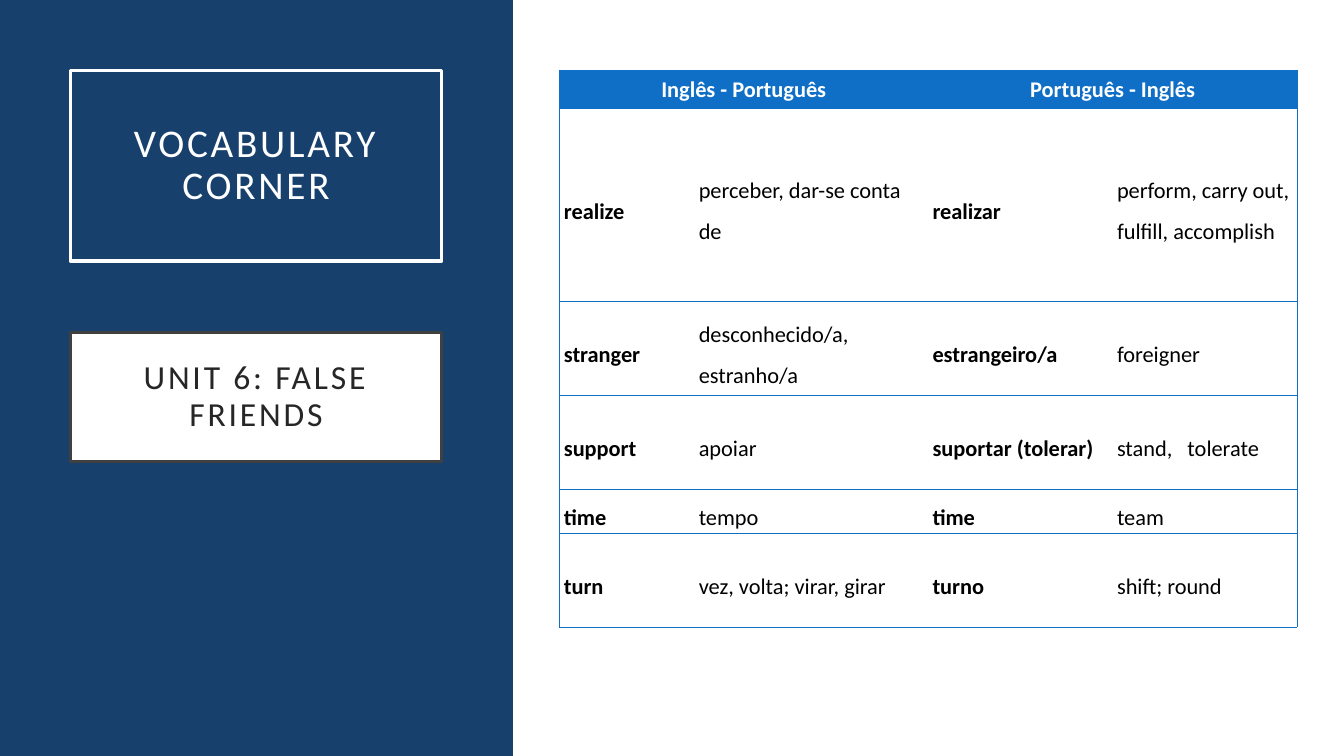
from dataclasses import dataclass

from lxml import etree
from pptx import Presentation
from pptx import util as u
from pptx.dml.color import RGBColor
from pptx.enum import shapes, text
from pptx.oxml.ns import qn
from pptx.slide import Slide

COLORS = {
    "navy": "17406D",
    "blue": "0F6FC6",
    "white": "FFFFFF",
    "frame": "404040",
    "ink": "262626",
    "black": "000000",
}
FONT = "Calibri"
BOX_LEFT, BOX_WIDTH = 1.78, 9.35
TOP = 1.78
COLUMN_WIDTHS = [3.4, 5.89, 4.65, 4.65]
HEADER_HEIGHT = 0.94
HEADERS = ["Inglês - Português", "Português - Inglês"]


@dataclass
class Box:
    wording: str
    top: float
    height: float
    size: int
    color: str
    line: str
    fill: str | None = None


@dataclass
class Entry:
    height: float
    words: list[str]


TITLE = Box("VOCABULARY CORNER", TOP, 4.8, 28, "white", "white")
UNIT = Box("UNIT 6: FALSE FRIENDS", 8.38, 3.25, 24, "ink", "frame", "white")
ENTRIES = [
    Entry(4.88, ["realize", "perceber, dar-se conta de", "realizar",
                 "perform, carry out, fulfill, accomplish"]),
    Entry(2.36, ["stranger", "desconhecido/a, estranho/a", "estrangeiro/a", "foreigner"]),
    Entry(2.36, ["support", "apoiar", "suportar (tolerar)", "stand,   tolerate"]),
    Entry(1.12, ["time", "tempo", "time", "team"]),
    Entry(2.36, ["turn", "vez, volta; virar, girar", "turno", "shift; round"]),
]


def rgb(name: str) -> RGBColor:
    return RGBColor.from_string(COLORS[name])


def format_text(paragraph, size: int, color: str, bold: bool, spacing: float) -> None:
    paragraph.line_spacing = spacing
    for run in paragraph.runs:
        run.font.name = FONT
        run.font.size = u.Pt(size)
        run.font.bold = bold
        run.font.color.rgb = rgb(color)


def draw_panel(slide: Slide, height: int) -> None:
    panel = slide.shapes.add_shape(shapes.MSO_SHAPE.RECTANGLE, 0, 0, u.Cm(12.93), height)
    panel.shadow.inherit = False
    panel.fill.solid()
    panel.fill.fore_color.rgb = rgb("navy")
    panel.line.fill.background()
    slide.shapes._spTree.insert(2, panel._element)


def format_box(shape, box: Box) -> None:
    shape.left, shape.top = u.Cm(BOX_LEFT), u.Cm(box.top)
    shape.width, shape.height = u.Cm(BOX_WIDTH), u.Cm(box.height)
    if box.fill:
        shape.fill.solid()
        shape.fill.fore_color.rgb = rgb(box.fill)
    else:
        shape.fill.background()
    shape.line.color.rgb = rgb(box.line)
    shape.line.width = u.Pt(2.5)
    frame = shape.text_frame
    frame.text = box.wording
    frame.word_wrap = True
    frame.auto_size = text.MSO_AUTO_SIZE.NONE
    frame.vertical_anchor = text.MSO_ANCHOR.MIDDLE
    frame.margin_left = frame.margin_right = u.Cm(0.51)
    frame.margin_top = frame.margin_bottom = u.Cm(0.51)
    paragraph = frame.paragraphs[0]
    paragraph.alignment = text.PP_ALIGN.CENTER
    format_text(paragraph, box.size, box.color, False, 0.9)
    for run in paragraph.runs:
        run._r.get_or_add_rPr().set("spc", "200")


def set_borders(cell, visible: str) -> None:
    properties = cell._tc.get_or_add_tcPr()
    for side in "LRTB":
        line = etree.SubElement(properties, qn(f"a:ln{side}"), w=str(u.Pt(0.5)))
        if side in visible:
            fill = etree.SubElement(line, qn("a:solidFill"))
            etree.SubElement(fill, qn("a:srgbClr"), val=COLORS["blue"])
        else:
            etree.SubElement(line, qn("a:noFill"))


def format_cell(cell, header: bool, bold: bool, borders: str) -> None:
    set_borders(cell, borders)
    cell.margin_left = cell.margin_right = u.Cm(0.11)
    cell.margin_top = cell.margin_bottom = 0
    cell.vertical_anchor = text.MSO_ANCHOR.TOP if header else text.MSO_ANCHOR.MIDDLE
    paragraph = cell.text_frame.paragraphs[0]
    if header:
        cell.fill.solid()
        cell.fill.fore_color.rgb = rgb("blue")
        paragraph.alignment = text.PP_ALIGN.CENTER
        format_text(paragraph, 16, "white", bold, 1.2)
    else:
        cell.fill.background()
        format_text(paragraph, 16, "black", bold, 1.5)


def draw_vocabulary(slide: Slide) -> None:
    heights = [HEADER_HEIGHT] + [entry.height for entry in ENTRIES]
    table = slide.shapes.add_table(
        len(heights), len(COLUMN_WIDTHS), u.Cm(14.1), u.Cm(TOP),
        u.Cm(sum(COLUMN_WIDTHS)), u.Cm(sum(heights)),
    ).table
    table.first_row = table.horz_banding = False
    for column, width in zip(table.columns, COLUMN_WIDTHS):
        column.width = u.Cm(width)
    for row, height in zip(table.rows, heights):
        row.height = u.Cm(height)
    for index, heading in enumerate(HEADERS):
        first = table.cell(0, 2 * index)
        first.merge(table.cell(0, 2 * index + 1))
        first.text_frame.text = heading
    for row_index, entry in enumerate(ENTRIES, start=1):
        for column_index, word in enumerate(entry.words):
            table.cell(row_index, column_index).text_frame.text = word
    for row_index in range(len(heights)):
        header = row_index == 0
        for column_index in range(len(COLUMN_WIDTHS)):
            borders = "TB"
            if column_index == 0:
                borders += "L"
            if column_index == 3 or (header and column_index == 2):
                borders += "R"
            bold = header or column_index % 2 == 0
            format_cell(table.cell(row_index, column_index), header, bold, borders)


def main() -> None:
    presentation = Presentation()
    presentation.slide_width, presentation.slide_height = u.Cm(33.87), u.Cm(19.05)
    slide = presentation.slides.add_slide(presentation.slide_layouts[5])
    draw_panel(slide, presentation.slide_height)
    format_box(slide.shapes.title, TITLE)
    unit = slide.shapes.add_shape(shapes.MSO_SHAPE.RECTANGLE, 0, 0, 0, 0)
    unit.shadow.inherit = False
    format_box(unit, UNIT)
    draw_vocabulary(slide)
    presentation.save("out.pptx")


if __name__ == "__main__":
    main()
